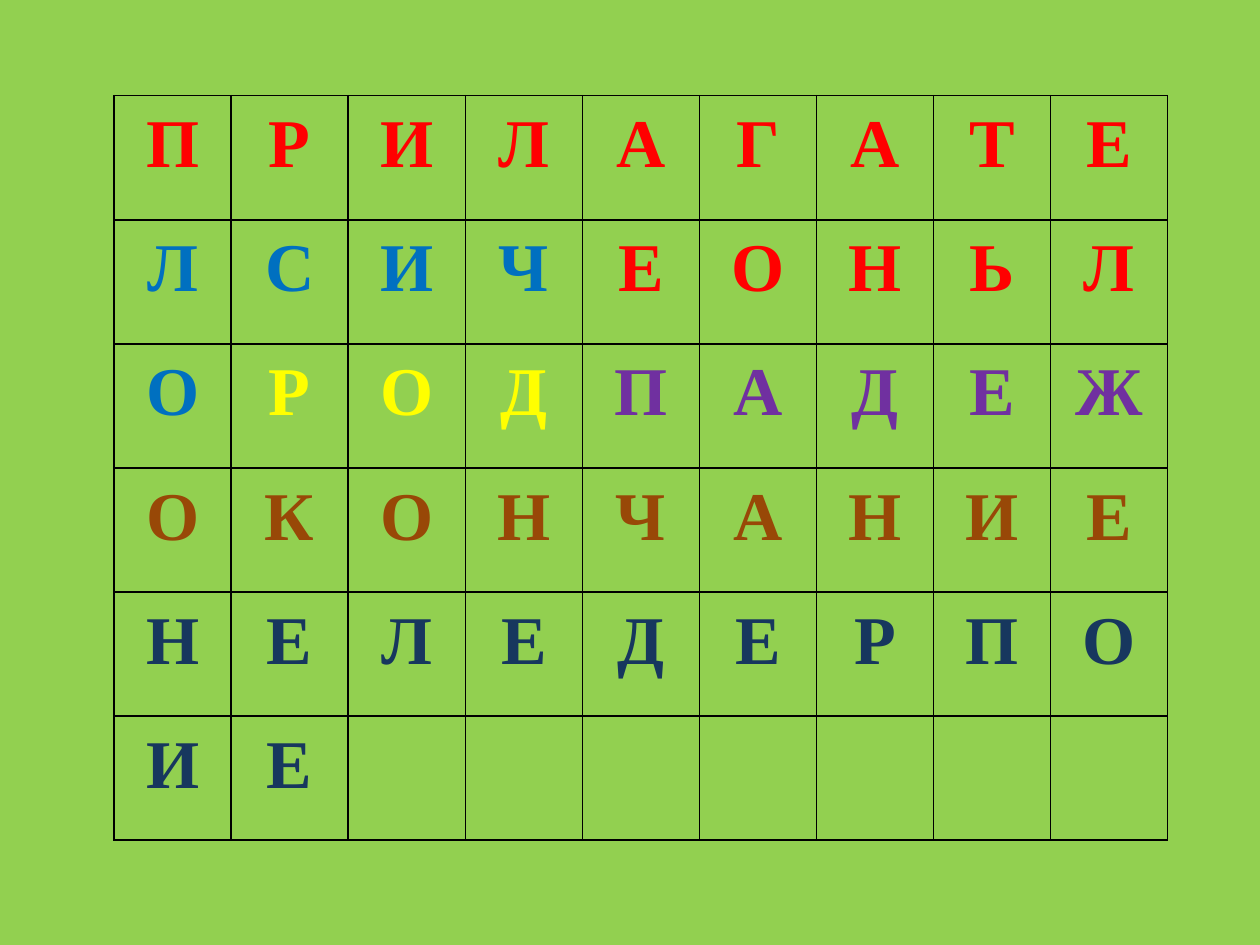
from lxml import etree
from pptx import Presentation
from pptx import util as u
from pptx.dml.color import RGBColor
from pptx.enum import text
from pptx.oxml.ns import qn

COLORS = {
    "background": "92D050", "border": "000000", "red": "FF0000", "blue": "0070C0",
    "yellow": "FFFF00", "purple": "7030A0", "brown": "984807", "navy": "17375E",
}
ROWS = [
    [("ПРИЛАГАТЕ", "red")],
    [("ЛСИЧ", "blue"), ("ЕОНЬЛ", "red")],
    [("О", "blue"), ("РОД", "yellow"), ("ПАДЕЖ", "purple")],
    [("ОКОНЧАНИЕ", "brown")],
    [("НЕЛЕДЕРПО", "navy")],
    [("ИЕ", "navy")],
]
COLUMNS = 9
LEFT, TOP = u.Cm(2.3), u.Cm(1.93)
CELL_W, CELL_H = u.Cm(2.36), u.Cm(2.5)
FONT = {"name": "Times New Roman", "size": u.Pt(39), "bold": True}
PARAGRAPH = {"alignment": text.PP_ALIGN.CENTER, "line_spacing": 1.15}
CELL = {"margin_left": u.Cm(0.1), "margin_right": u.Cm(0.1),
        "margin_top": 0, "margin_bottom": 0}


def apply(obj, values):
    for name, value in values.items():
        setattr(obj, name, value)


def add_borders(cell):
    tc_pr = cell._tc.get_or_add_tcPr()
    for i, side in enumerate(("lnL", "lnR", "lnT", "lnB")):
        ln = etree.Element(qn(f"a:{side}"), w=str(u.Pt(1)))
        fill = etree.SubElement(ln, qn("a:solidFill"))
        etree.SubElement(fill, qn("a:srgbClr"), val=COLORS["border"])
        tc_pr.insert(i, ln)


def write_letter(cell, letter, color):
    p = cell.text_frame.paragraphs[0]
    apply(p, PARAGRAPH)
    r = p.add_run()
    r.text = letter
    apply(r.font, FONT)
    r.font.color.rgb = RGBColor.from_string(COLORS[color])


def main():
    prs = Presentation()
    prs.slide_width, prs.slide_height = u.Cm(25.4), u.Cm(19.05)
    s = prs.slides.add_slide(prs.slide_layouts[6])
    s.background.fill.solid()
    s.background.fill.fore_color.rgb = RGBColor.from_string(COLORS["background"])

    table = s.shapes.add_table(len(ROWS), COLUMNS, LEFT, TOP,
                               CELL_W * COLUMNS, CELL_H * len(ROWS)).table
    apply(table, {"first_row": False, "horz_banding": False})
    for column in table.columns:
        column.width = CELL_W
    for row in table.rows:
        row.height = CELL_H

    for cell in table.iter_cells():
        apply(cell, CELL)
        cell.fill.background()
        add_borders(cell)

    for i, groups in enumerate(ROWS):
        letters = [(letter, color) for word, color in groups for letter in word]
        for j, (letter, color) in enumerate(letters):
            write_letter(table.cell(i, j), letter, color)

    prs.save("out.pptx")


if __name__ == "__main__":
    main()
